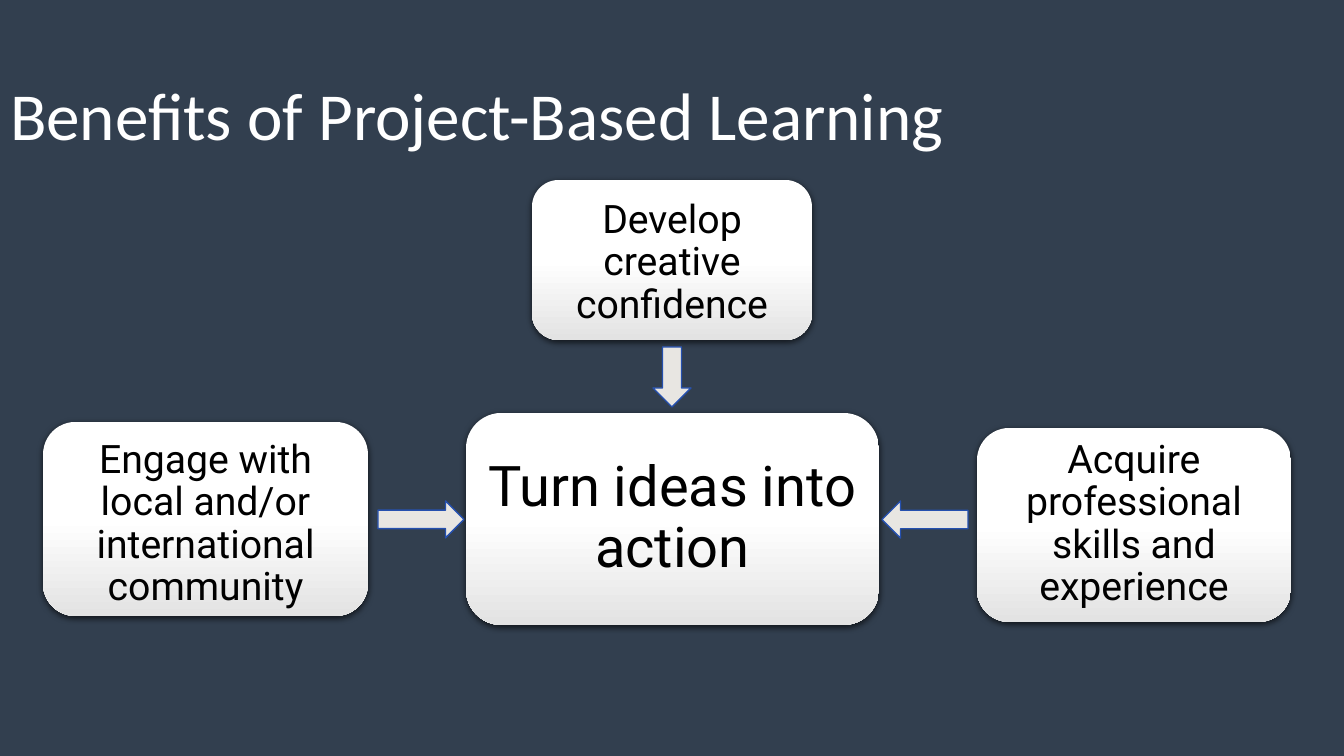
from copy import deepcopy

from lxml.etree import SubElement
from pptx import Presentation
from pptx.dml.color import RGBColor
from pptx.enum.shapes import MSO_SHAPE as SHAPE
from pptx.enum.text import MSO_ANCHOR as ANCHOR, PP_ALIGN as ALIGN
from pptx.oxml.ns import qn
from pptx.util import Pt

TITLE = "Benefits of Project-Based Learning"
COLORS = {
    "background": "323F4F",
    "title": "FFFFFF",
    "card_top": "FFFFFF",
    "card_bottom": "E3E3E3",
    "card_text": "000000",
    "shadow": "000000",
    "arrow": "E8E6E2",
    "arrow_line": "2550AF",
}
# text, (left, top, width, height), text size, (side, top, bottom) insets
CARDS = [
    ("Turn ideas into action", (466, 413, 413, 212), 40, (3, 3, 3)),
    ("Engage with local and/or international community",
     (43, 422, 325, 194), 28, (4, 11, 0)),
    ("Develop creative confidence", (532, 180, 280, 160), 28, (2, 6, 0)),
    ("Acquire professional skills and experience",
     (977, 428, 314, 194), 28, (5, 2, 3)),
]
# (left, top, width, height) before turning, rotation
ARROWS = [
    ((378, 501, 86, 37), 0),
    ((882, 501, 86, 37), 180),
    ((642, 358, 60, 38), 90),
]


def px(n):
    return round(n * 914400 / 100.8)


def rgb(name):
    return RGBColor.from_string(COLORS[name])


def set_font(p, name, size, color):
    p.line_spacing = 0.9
    p.font.name = name
    p.font.size = Pt(size)
    p.font.color.rgb = rgb(color)


def add_shape(slide, kind, box):
    sp = slide.shapes.add_shape(kind, *map(px, box))
    sp.shadow.inherit = False
    return sp


def shade_card(sp):
    """Fill with white that turns grey in the lower half, over a soft shadow."""
    fill = sp.fill
    fill.gradient()
    fill.gradient_angle = 270
    for stop, position, color in zip(
            fill.gradient_stops, (0.5, 1), ("card_top", "card_bottom")):
        stop.position = position
        stop.color.rgb = rgb(color)
    props = sp._element.spPr
    stops = props.find(".//" + qn("a:gsLst"))
    first = deepcopy(stops[0])
    first.set("pos", "0")
    stops.insert(0, first)
    sp.line.fill.background()
    shadow = SubElement(
        props.find(qn("a:effectLst")), qn("a:outerShdw"),
        blurRad=str(Pt(4.5)), dist=str(Pt(1.5)), dir="5400000",
        algn="ctr", rotWithShape="0")
    color = SubElement(shadow, qn("a:srgbClr"), val=COLORS["shadow"])
    SubElement(color, qn("a:alpha"), val="63000")


def add_card(slide, text, box, size, insets):
    sp = add_shape(slide, SHAPE.ROUNDED_RECTANGLE, box)
    shade_card(sp)
    side, top, bottom = map(px, insets)
    tf = sp.text_frame
    tf.word_wrap = True
    tf.vertical_anchor = ANCHOR.MIDDLE
    tf.margin_left = tf.margin_right = side
    tf.margin_top, tf.margin_bottom = top, bottom
    p = tf.paragraphs[0]
    p.text = text
    p.alignment = ALIGN.CENTER
    set_font(p, "Roboto", size, "card_text")


def add_arrow(slide, box, rotation):
    sp = add_shape(slide, SHAPE.RIGHT_ARROW, box)
    sp.rotation = rotation
    sp.fill.solid()
    sp.fill.fore_color.rgb = rgb("arrow")
    sp.line.color.rgb = rgb("arrow_line")
    sp.line.width = Pt(1)


def add_title(slide):
    sp = slide.shapes.title
    sp.left, sp.top, sp.width, sp.height = map(px, (0, 23, 1203, 192))
    tf = sp.text_frame
    tf.word_wrap = True
    tf.vertical_anchor = ANCHOR.MIDDLE
    p = tf.paragraphs[0]
    p.text = TITLE
    p.alignment = ALIGN.LEFT
    set_font(p, "Calibri", 48, "title")


def main():
    prs = Presentation()
    prs.slide_width, prs.slide_height = px(1344), px(756)
    slide = prs.slides.add_slide(prs.slide_layouts[5])
    slide.background.fill.solid()
    slide.background.fill.fore_color.rgb = rgb("background")
    add_title(slide)
    for card in CARDS:
        add_card(slide, *card)
    for arrow in ARROWS:
        add_arrow(slide, *arrow)
    prs.save("out.pptx")


if __name__ == "__main__":
    main()
